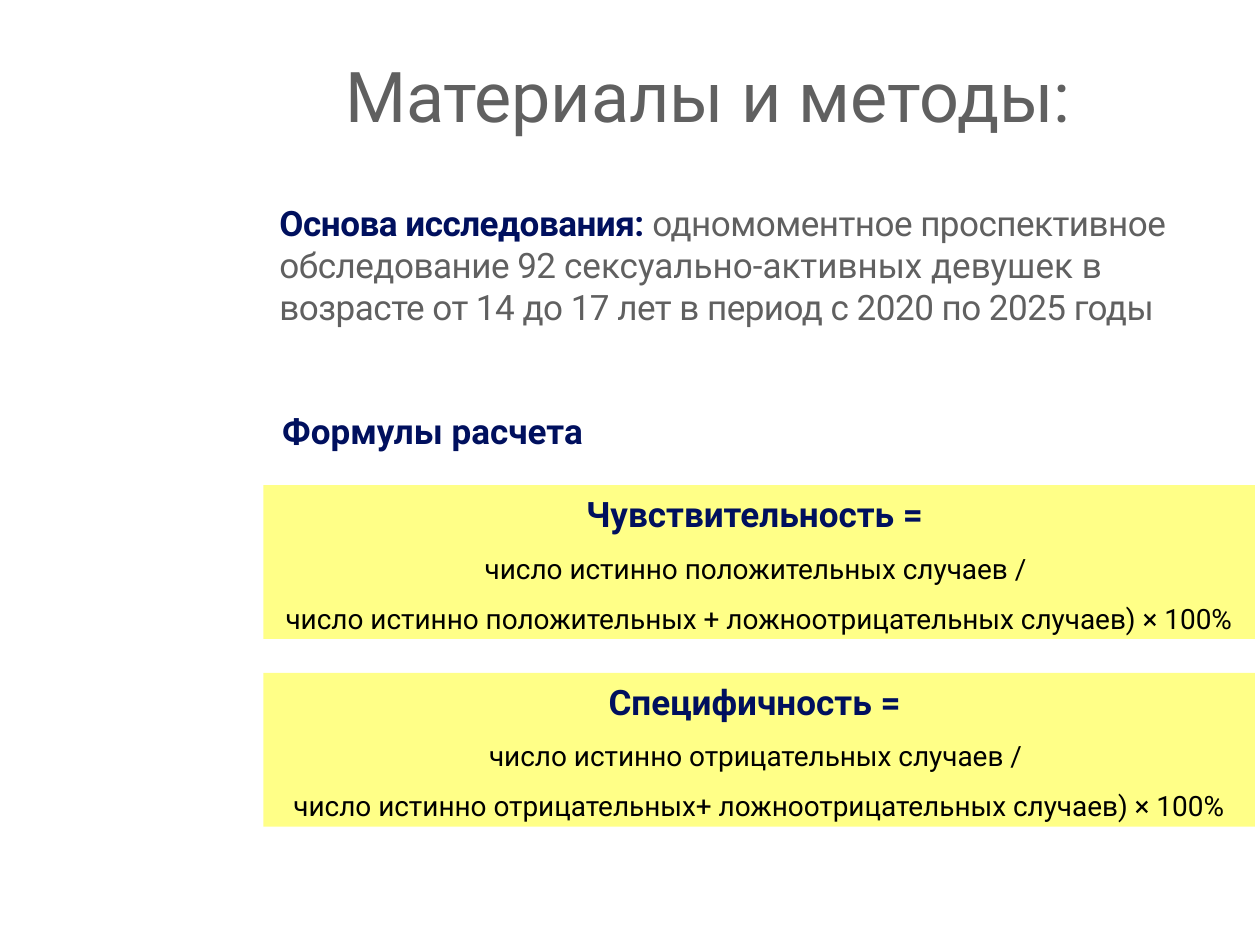
import dataclasses
import typing

import pptx
import pptx.dml.color
import pptx.enum.shapes
import pptx.enum.text
import pptx.oxml.ns
import pptx.util
from lxml import etree

RGB = pptx.dml.color.RGBColor
NAVY = RGB(0x00, 0x10, 0x5E)
GREY = RGB(0x60, 0x60, 0x60)
BLACK = RGB(0x00, 0x00, 0x00)
YELLOW = RGB(0xFF, 0xFF, 0x00)
FONT = "Roboto"
SCALE = 9144


@dataclasses.dataclass(frozen=True)
class Box:
    left: int
    top: int
    width: int
    height: int


class Style(typing.NamedTuple):
    size: int
    color: RGB
    bold: bool = False
    track: int = 0


class Formula(typing.NamedTuple):
    name: str
    upper: str
    lower: str


TITLE = Style(40, GREY)
HEAD = Style(20, NAVY, True)
LEAD = Style(20, NAVY, True, -30)
TIGHT = Style(20, GREY, False, -30)
PLAIN = Style(20, GREY)
TERM = Style(16, BLACK)

BASIS = [
    ("Основа исследования: ", LEAD),
    ("одномоментное проспективное обследование 92 ", TIGHT),
    ("сексуально-активных девушек", PLAIN),
    (" в возрасте от 14 до 17 лет в период с 2020 по 2025 годы", TIGHT),
]
FORMULAS = [
    Formula(
        "Чувствительность = ",
        "число истинно положительных случаев / ",
        "число истинно положительных + ложноотрицательных случаев) × 100%",
    ),
    Formula(
        "Специфичность = ",
        "число истинно отрицательных случаев / ",
        "число истинно отрицательных+ ложноотрицательных случаев) × 100%",
    ),
]
PANEL = Box(209, 385, 787, 122)
STEP = 149


def px(count: int) -> pptx.util.Emu:
    return pptx.util.Emu(count * SCALE)


def place(box: Box) -> tuple:
    return tuple(px(side) for side in dataclasses.astuple(box))


def format_run(run, style: Style) -> None:
    font = run.font
    font.name = FONT
    font.size = pptx.util.Pt(style.size)
    font.bold = style.bold
    font.color.rgb = style.color
    if style.track:
        run._r.get_or_add_rPr().set("spc", str(style.track))


def trim(frame) -> None:
    frame.margin_left = frame.margin_right = 0
    frame.margin_top = frame.margin_bottom = 0


def add_text(slide, box: Box, parts: list, wrap: bool = True):
    frame = slide.shapes.add_textbox(*place(box)).text_frame
    frame.word_wrap = wrap
    line = frame.paragraphs[0]
    for text, style in parts:
        run = line.add_run()
        run.text = text
        format_run(run, style)
    return frame


def add_formula(slide, box: Box, formula: Formula) -> None:
    kind = pptx.enum.shapes.MSO_SHAPE.RECTANGLE
    panel = slide.shapes.add_shape(kind, *place(box))
    panel.shadow.inherit = False
    panel.line.fill.background()
    panel.fill.solid()
    panel.fill.fore_color.rgb = YELLOW
    tint = panel._element.spPr.find(".//" + pptx.oxml.ns.qn("a:srgbClr"))
    etree.SubElement(tint, pptx.oxml.ns.qn("a:alpha"), val="47000")
    frame = panel.text_frame
    trim(frame)
    frame.word_wrap = True
    frame.vertical_anchor = pptx.enum.text.MSO_ANCHOR.TOP
    frame.text = "\n".join(formula)
    for line, style in zip(frame.paragraphs, (HEAD, TERM, TERM)):
        line.alignment = pptx.enum.text.PP_ALIGN.CENTER
        line.line_spacing = pptx.util.Pt(28.5)
        format_run(line.runs[0], style)


def main() -> None:
    deck = pptx.Presentation()
    deck.slide_width, deck.slide_height = px(1000), px(750)
    slide = deck.slides.add_slide(deck.slide_layouts[6])

    title = add_text(slide, Box(264, 36, 654, 78), [("Материалы и методы:", TITLE)])
    title.vertical_anchor = pptx.enum.text.MSO_ANCHOR.MIDDLE

    basis = add_text(slide, Box(212, 155, 787, 150), BASIS)
    basis.paragraphs[0].space_after = pptx.util.Pt(6)

    label = add_text(slide, Box(224, 320, 310, 39), [("Формулы расчета", HEAD)], False)
    trim(label)
    label.paragraphs[0].line_spacing = pptx.util.Pt(27.5)

    for index, formula in enumerate(FORMULAS):
        box = dataclasses.replace(PANEL, top=PANEL.top + index * STEP)
        add_formula(slide, box, formula)

    deck.save("out.pptx")


if __name__ == "__main__":
    main()
